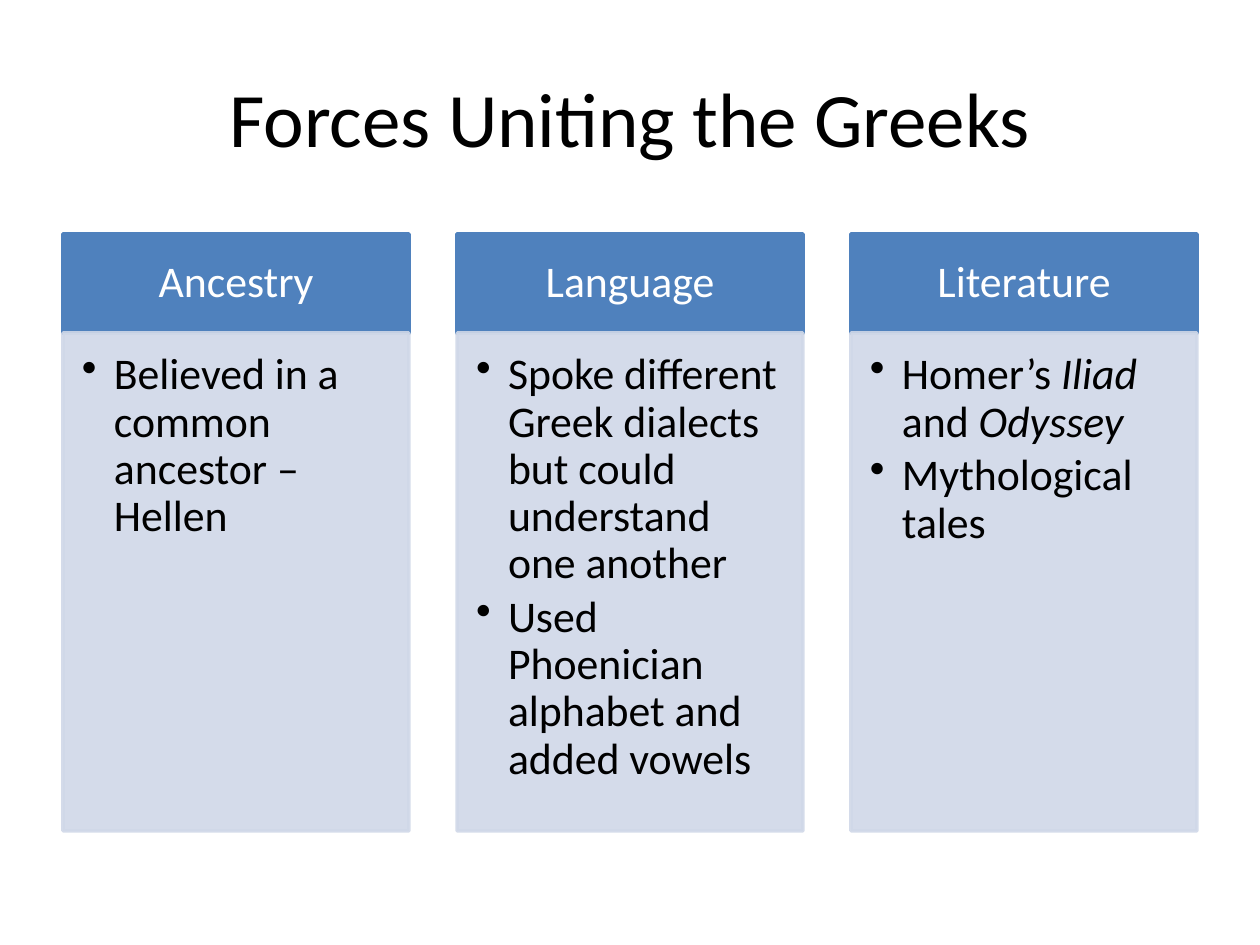
"""Builds a slide with three columns on the forces uniting the Greeks."""
from dataclasses import dataclass

from lxml import etree
from pptx import Presentation
from pptx.dml.color import RGBColor
from pptx.enum.shapes import MSO_SHAPE
from pptx.enum.text import MSO_ANCHOR, MSO_AUTO_SIZE, PP_ALIGN
from pptx.oxml.ns import qn
from pptx.util import Pt

RECT = MSO_SHAPE.RECTANGLE
TOP, MIDDLE = MSO_ANCHOR.TOP, MSO_ANCHOR.MIDDLE
LEFT, CENTER = PP_ALIGN.LEFT, PP_ALIGN.CENTER
NO_FIT = MSO_AUTO_SIZE.NONE
TITLE_ONLY = 5
SCALE = 914400 / 126


@dataclass(frozen=True)
class Theme:
    font: str = "Calibri"
    title_size: int = 44
    text_size: int = 25
    ink: str = "000000"
    paper: str = "FFFFFF"
    header: str = "4F81BD"
    panel: str = "D0D8E8"
    panel_alpha: int = 90


def px(n):
    return round(n * SCALE)


def write(p, text, *, theme, size, color, align=LEFT, spacing=None, after=0):
    p.alignment = align
    p.line_spacing = spacing
    p.space_before, p.space_after = Pt(0), Pt(after)
    for i, part in enumerate(text.split("*")):
        if part:
            r = p.add_run()
            r.text = part
            r.font.name, r.font.size = theme.font, Pt(size)
            r.font.italic = i % 2 == 1
            r.font.color.rgb = RGBColor.from_string(color)


class Deck:
    def __init__(self, theme):
        self.theme = theme
        self.prs = Presentation()
        self.prs.slide_width, self.prs.slide_height = px(1260), px(945)
        self.s = self.prs.slides.add_slide(self.prs.slide_layouts[TITLE_ONLY])

    def title(self, text, x, y, w, h):
        sp = self.s.shapes.title
        sp.left, sp.top, sp.width, sp.height = map(px, (x, y, w, h))
        tf = sp.text_frame
        tf.auto_size, tf.vertical_anchor = NO_FIT, MIDDLE
        write(tf.paragraphs[0], text, theme=self.theme,
              size=self.theme.title_size, color=self.theme.ink, align=CENTER)

    def box(self, x, y, w, h, color, insets, anchor):
        sp = self.s.shapes.add_shape(RECT, *map(px, (x, y, w, h)))
        sp.shadow.inherit = False
        sp.fill.solid()
        sp.fill.fore_color.rgb = sp.line.color.rgb = RGBColor.from_string(color)
        sp.line.width = Pt(2)
        tf = sp.text_frame
        tf.word_wrap, tf.vertical_anchor = True, anchor
        (tf.margin_left, tf.margin_top,
         tf.margin_right, tf.margin_bottom) = map(px, insets)
        return sp

    def header(self, text, x, y, w, h):
        t = self.theme
        sp = self.box(x, y, w, h, t.header, (24, 14, 24, 14), MIDDLE)
        write(sp.text_frame.paragraphs[0], text, theme=t, size=t.text_size,
              color=t.paper, align=CENTER, spacing=0.9)

    def panel(self, items, x, y, w, h):
        t = self.theme
        sp = self.box(x, y, w, h, t.panel, (19, 19, 24, 28), TOP)
        for clr in sp.fill._xPr.iter(qn("a:srgbClr")):
            etree.SubElement(clr, qn("a:alpha"), val=str(t.panel_alpha * 1000))
        tf = sp.text_frame
        for i, item in enumerate(items):
            p = tf.add_paragraph() if i else tf.paragraphs[0]
            p.level = 1
            write(p, item, theme=t, size=t.text_size, color=t.ink,
                  spacing=0.9, after=3.75)
            pPr = p._p.get_or_add_pPr()
            pPr.set("marL", str(px(32)))
            pPr.set("indent", str(-px(32)))
            etree.SubElement(pPr, qn("a:buChar"), char="•")


COLUMNS = {
    "Ancestry": ["Believed in a common ancestor – Hellen"],
    "Language": ["Spoke different Greek dialects but could understand one another",
                 "Used Phoenician alphabet and added vowels"],
    "Literature": ["Homer’s *Iliad* and *Odyssey*", "Mythological tales"],
}


def main():
    deck = Deck(Theme())
    deck.title("Forces Uniting the Greeks", 63, 38, 1134, 157)
    left, width, pitch = 63, 346, 394
    top, header_h, panel_h = 234, 99, 498
    for i, (name, items) in enumerate(COLUMNS.items()):
        x = left + i * pitch
        deck.header(name, x, top, width, header_h)
        deck.panel(items, x, top + header_h, width, panel_h)
    deck.prs.save("out.pptx")


if __name__ == "__main__":
    main()
